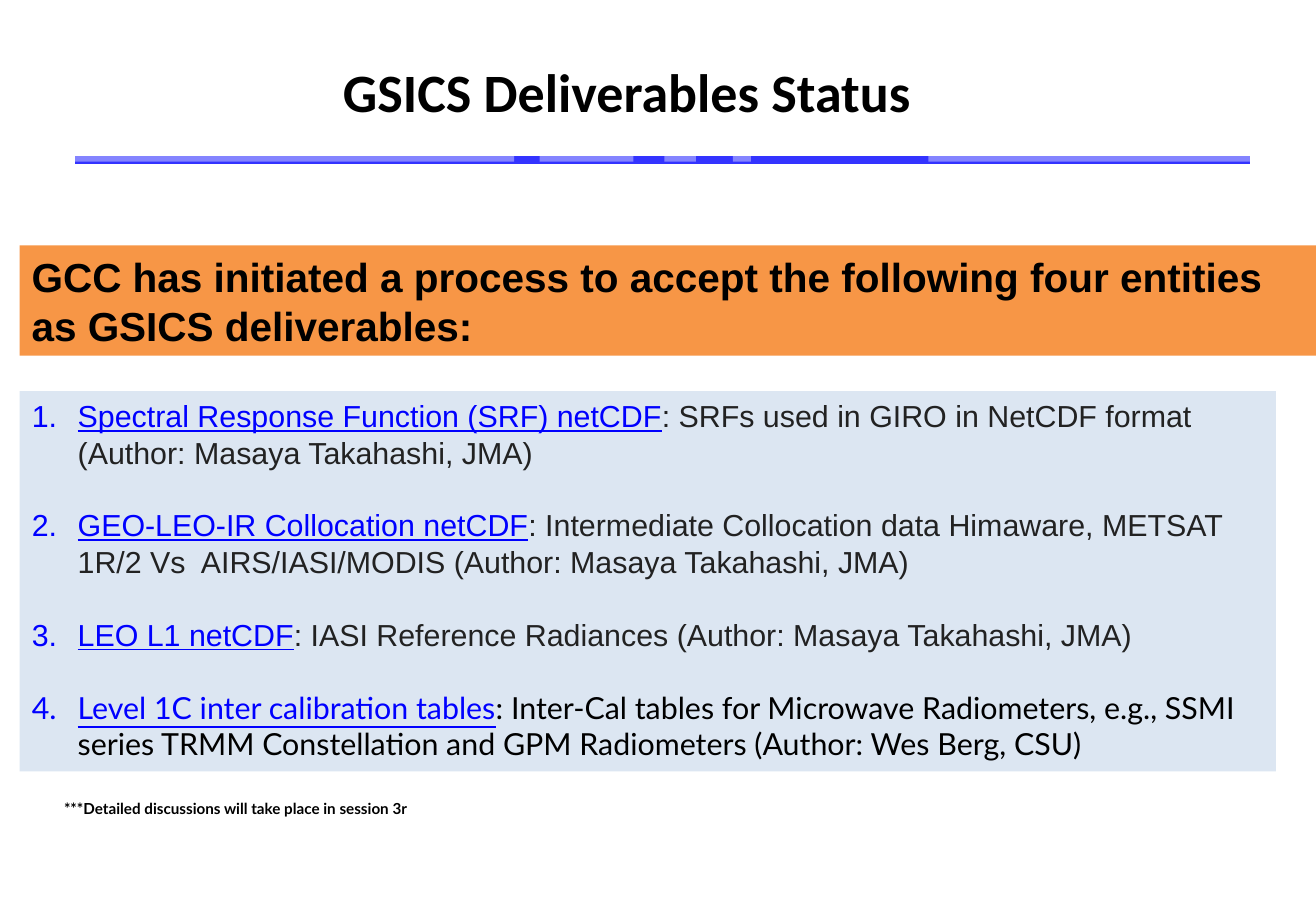
from dataclasses import dataclass

from lxml.etree import SubElement
from pptx import Presentation
from pptx.dml.color import RGBColor
from pptx.enum.shapes import MSO_CONNECTOR, MSO_SHAPE
from pptx.enum.text import MSO_ANCHOR, MSO_AUTO_SIZE, PP_ALIGN
from pptx.oxml.ns import qn
from pptx.util import Cm, Pt

BLACK, WHITE, GREY = "000000", "FFFFFF", "222222"
LINK_BLUE, RULE_BLUE = "0000FF", "3333FF"
PALE_BLUE, ORANGE = "DCE6F2", "F79646"


@dataclass
class Deliverable:
    name: str
    description: str
    name_font: str = "Arial"
    description_color: str = GREY


@dataclass
class Veil:
    """Translucent white strip that lightens part of the title rule."""
    left: float
    width: float


DELIVERABLES = [
    Deliverable("Spectral Response Function (SRF) netCDF",
                ": SRFs used in GIRO in NetCDF format (Author: Masaya Takahashi, JMA)"),
    Deliverable("GEO-LEO-IR Collocation netCDF",
                ": Intermediate Collocation data Himaware, METSAT 1R/2 Vs  AIRS/IASI/MODIS "
                "(Author: Masaya Takahashi, JMA)"),
    Deliverable("LEO L1 netCDF",
                ": IASI Reference Radiances (Author: Masaya Takahashi, JMA)"),
    Deliverable("Level 1C inter calibration tables",
                ": Inter-Cal tables for Microwave Radiometers, e.g., SSMI series TRMM "
                "Constellation and GPM Radiometers (Author: Wes Berg, CSU)",
                "Lato", BLACK),
]
VEILS = [Veil(0.03, 10.72), Veil(11.28, 1.96), Veil(13.89, 0.66),
         Veil(15.32, 0.38), Veil(19.41, 8.1)]


def color(hex_code: str) -> RGBColor:
    return RGBColor.from_string(hex_code)


def place(shape, left: float, top: float, width: float, height: float) -> None:
    shape.left, shape.top = Cm(left), Cm(top)
    shape.width, shape.height = Cm(width), Cm(height)


def paint(shape, hex_code: str) -> None:
    shape.fill.solid()
    shape.fill.fore_color.rgb = color(hex_code)


def add_rectangle(page, left: float, top: float, width: float, height: float, hex_code: str):
    box = page.shapes.add_shape(MSO_SHAPE.RECTANGLE, Cm(left), Cm(top), Cm(width), Cm(height))
    box.shadow.inherit = False
    box.line.fill.background()
    paint(box, hex_code)
    return box


def add_span(para, text: str, font: str, size: float, hex_code: str,
             bold: bool = False, underline: bool = False) -> None:
    span = para.add_run()
    span.text = text
    span.font.name, span.font.size = font, Pt(size)
    span.font.bold, span.font.underline = bold, underline
    span.font.color.rgb = color(hex_code)


def number_paragraph(para, indent: float) -> None:
    properties = para._p.get_or_add_pPr()
    properties.set("marL", str(Cm(indent)))
    properties.set("indent", str(-Cm(indent)))
    SubElement(properties, qn("a:buFont"), typeface="+mj-lt")
    SubElement(properties, qn("a:buAutoNum"), type="arabicPeriod")


def add_title_rule(page) -> None:
    rule = page.shapes.add_connector(MSO_CONNECTOR.STRAIGHT,
                                     Cm(1.57), Cm(3.35), Cm(26.14), Cm(3.35))
    rule.line.color.rgb = color(RULE_BLUE)
    rule.line.width = Pt(4.5)
    SubElement(rule._element.spPr, qn("a:effectLst"))
    for veil in VEILS:
        strip = add_rectangle(page, veil.left, 3.02, veil.width, 0.36, WHITE)
        tint = strip._element.spPr.find(qn("a:solidFill")).find(qn("a:srgbClr"))
        SubElement(tint, qn("a:alpha"), val="40000")


def fill_title(page) -> None:
    title = page.shapes.title
    place(title, 5.64, 1.24, 14.94, 1.32)
    frame = title.text_frame
    frame.auto_size = MSO_AUTO_SIZE.NONE
    frame.vertical_anchor = MSO_ANCHOR.MIDDLE
    para = frame.paragraphs[0]
    para.alignment = PP_ALIGN.CENTER
    add_span(para, "GSICS Deliverables Status", "Calibri", 32, BLACK, bold=True)


def fill_deliverables(page) -> None:
    body = page.placeholders[1]
    place(body, 0.41, 8.18, 26.26, 7.95)
    paint(body, PALE_BLUE)
    frame = body.text_frame
    frame.auto_size = MSO_AUTO_SIZE.NONE
    frame.vertical_anchor = MSO_ANCHOR.TOP
    for position, item in enumerate(DELIVERABLES):
        para = frame.add_paragraph() if position else frame.paragraphs[0]
        number_paragraph(para, 0.96)
        para.line_spacing = Pt(21.6)
        para.space_before = Pt(21.6 if position else 0)
        add_span(para, item.name, item.name_font, 18, LINK_BLUE, underline=True)
        add_span(para, item.description, item.name_font, 18, item.description_color)


def add_banner(page) -> None:
    banner = add_rectangle(page, 0.41, 5.13, 27.1, 2.31, ORANGE)
    frame = banner.text_frame
    frame.word_wrap = True
    frame.vertical_anchor = MSO_ANCHOR.TOP
    para = frame.paragraphs[0]
    para.alignment = PP_ALIGN.LEFT
    para.line_spacing = Pt(29)
    add_span(para, "GCC has initiated a process to accept the following four entities "
                   "as GSICS deliverables:", "Arial", 24, BLACK, bold=True)


def add_footnote(page) -> None:
    note = page.shapes.add_textbox(Cm(1.09), Cm(16.59), Cm(9.02), Cm(0.64))
    note.text_frame.word_wrap = False
    add_span(note.text_frame.paragraphs[0],
             "***Detailed discussions will take place in session 3r", "Lato", 9, BLACK, bold=True)


def main() -> None:
    deck = Presentation()
    deck.slide_width, deck.slide_height = Cm(27.51), Cm(19.05)
    page = deck.slides.add_slide(deck.slide_layouts[1])
    add_title_rule(page)
    fill_title(page)
    fill_deliverables(page)
    add_banner(page)
    add_footnote(page)
    deck.save("out.pptx")


if __name__ == "__main__":
    main()
